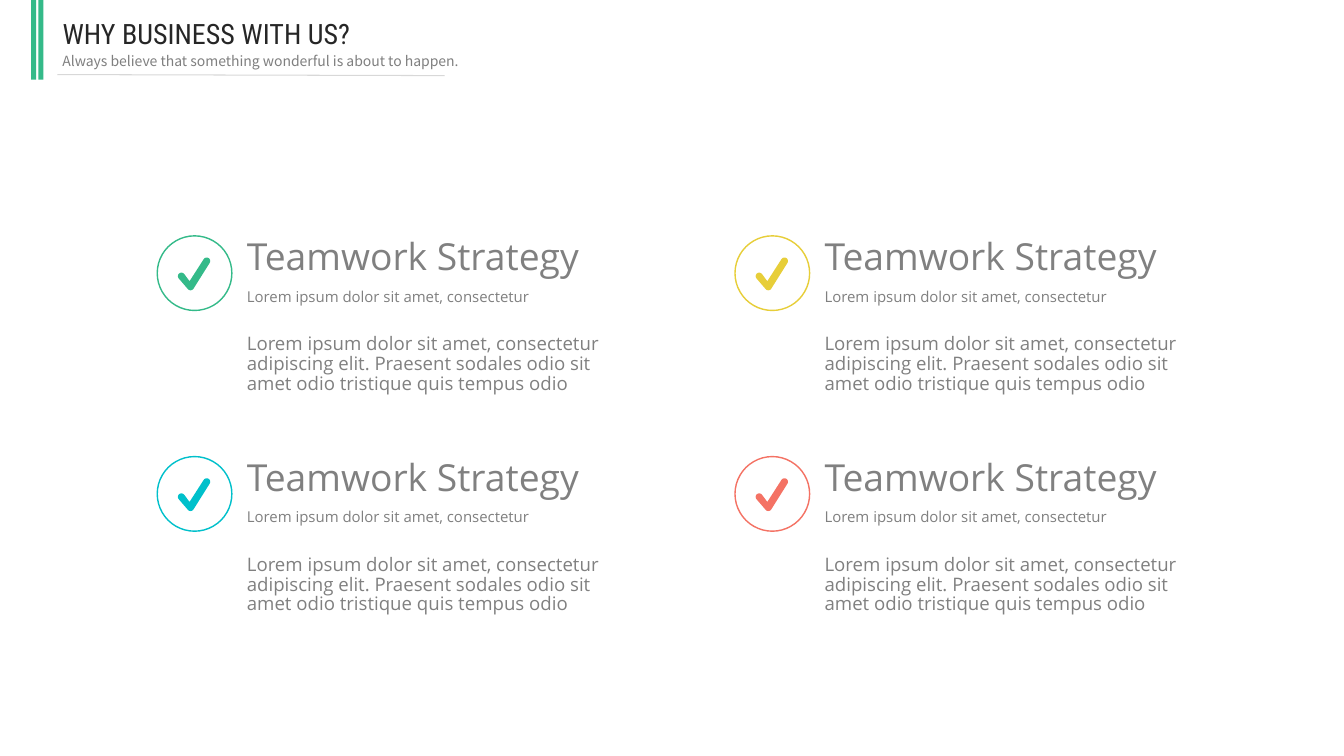
import math

from lxml import etree
from pptx import Presentation
from pptx import util as u
from pptx.dml.color import RGBColor
from pptx.enum import shapes, text
from pptx.oxml import ns

GREEN, CYAN, YELLOW, RED = "34BA89", "00C0CB", "E7CE39", "F47264"
GREY = "808080"
HEADING = "Teamwork Strategy"
SUMMARY = "Lorem ipsum dolor sit amet, consectetur"
BODY = SUMMARY + " adipiscing elit. Praesent sodales odio sit amet odio tristique quis tempus odio"
CHECK_INNER = (0.32, 0.45)
CHECK_RADIUS = 0.035
CHECK_ARCS = [(0.24, 0.40, -41, -221), (0.33, 0.505, 139, 32), (0.49, 0.25, 32, -148)]


def color(value):
    """Return a colour from a hex string."""
    return RGBColor.from_string(value)


def box(x, y, w, h):
    """Return left, top, width and height as lengths."""
    return [u.Inches(v) for v in (x, y, w, h)]


def write(sp, content, size, font, fill, spacing=1.0):
    """Fill a shape with one left-aligned paragraph."""
    tf = sp.text_frame
    tf.text = content
    tf.word_wrap = True
    tf.auto_size = text.MSO_AUTO_SIZE.NONE
    tf.vertical_anchor = text.MSO_ANCHOR.MIDDLE
    p = tf.paragraphs[0]
    p.alignment = text.PP_ALIGN.LEFT
    p.line_spacing = spacing
    r = p.runs[0]
    r.font.size = u.Pt(size)
    r.font.name = font
    r.font.color.rgb = color(fill)


def paint(sp, fill):
    """Give a shape a plain fill without line or shadow."""
    sp.shadow.inherit = False
    sp.fill.solid()
    sp.fill.fore_color.rgb = color(fill)
    sp.line.fill.background()


def add_bar(parent, x):
    """Add one accent bar at the top edge."""
    paint(parent.add_shape(shapes.MSO_SHAPE.RECTANGLE, *box(x, 0, 0.05, 0.79)), GREEN)


def add_rule(parent, x1, y1, x2, y2):
    """Add the thin line below the header."""
    ln = parent.add_connector(shapes.MSO_CONNECTOR.STRAIGHT, *box(x1, y1, x2, y2))
    ln.line.color.rgb = color("D8D8D8")
    ln.line.width = u.Pt(0.75)
    etree.SubElement(ln._element.spPr, ns.qn("a:effectLst"))


def add_check(parent, x, y, fill):
    """Add a check mark with rounded ends."""
    points = [CHECK_INNER]
    for cx, cy, start, end in CHECK_ARCS:
        for step in range(13):
            angle = math.radians(start + (end - start) * step / 12)
            points.append((cx + CHECK_RADIUS * math.cos(angle),
                           cy + CHECK_RADIUS * math.sin(angle)))
    points = [(u.Inches(x + px), u.Inches(y + py)) for px, py in points]
    fb = parent.build_freeform(*points[0])
    fb.add_line_segments(points[1:], close=True)
    paint(fb.convert_to_shape(), fill)


def add_item(s, x, y, fill):
    """Add a circled check mark with its three texts."""
    parent = s.shapes.add_group_shape().shapes
    sp = parent.add_shape(shapes.MSO_SHAPE.OVAL, *box(x, y, 0.74, 0.74))
    sp.shadow.inherit = False
    sp.fill.background()
    sp.line.color.rgb = color(fill)
    sp.line.width = u.Pt(1)
    add_check(parent, x, y, fill)
    for content, dy, w, h, size in [(HEADING, -0.05, 4.58, 0.55, 26.6),
                                    (BODY, 0.89, 3.85, 0.77, 13.3),
                                    (SUMMARY, 0.47, 3.13, 0.28, 10.7)]:
        sp = parent.add_textbox(*box(x + 0.79, y + dy, w, h))
        write(sp, content, size, "Open Sans", GREY, 0.89)


def add_header(s):
    """Add the accent bars, title, subtitle and rule."""
    bars = s.shapes.add_group_shape().shapes
    for x in (0.31, 0.38):
        add_bar(bars, x)
    title = s.shapes.title
    title.left, title.top, title.width, title.height = box(0.52, 0.11, 4.23, 0.44)
    write(title, "WHY BUSINESS WITH US?", 20, "Roboto Condensed", "262626")
    sp = s.shapes.add_textbox(*box(0.52, 0.47, 4.23, 0.27))
    write(sp, "Always believe that something wonderful is about to happen.",
          10, "Noto Sans CJK SC", "7F7F7F")
    add_rule(s.shapes, 0.57, 0.74, 4.41, 0.75)


def main():
    """Build and save the slide."""
    prs = Presentation()
    prs.slide_width, prs.slide_height = u.Inches(13.33), u.Inches(7.5)
    s = prs.slides.add_slide(prs.slide_layouts[5])
    for i, fill in enumerate([GREEN, CYAN, YELLOW, RED]):
        col, row = divmod(i, 2)
        add_item(s, 1.56 + 5.73 * col, 2.34 + 2.19 * row, fill)
    add_header(s)
    prs.save("out.pptx")


if __name__ == "__main__":
    main()
